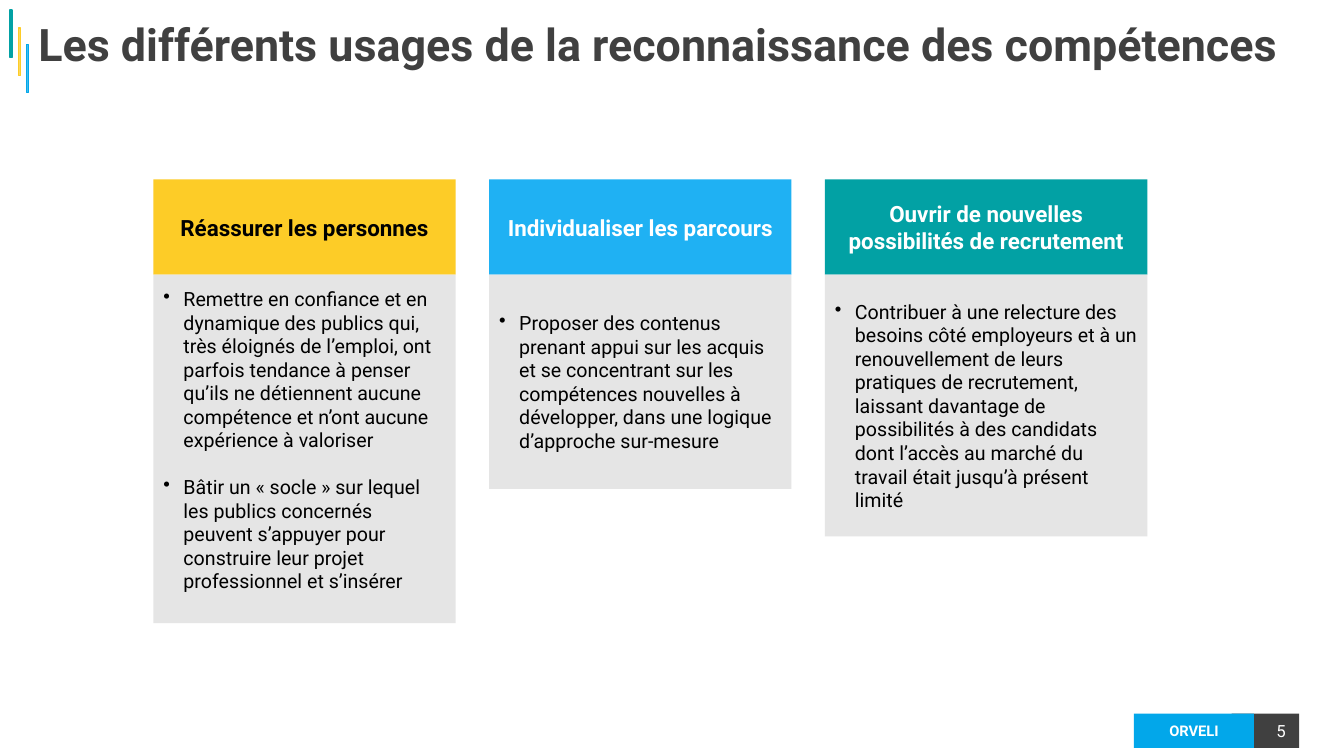
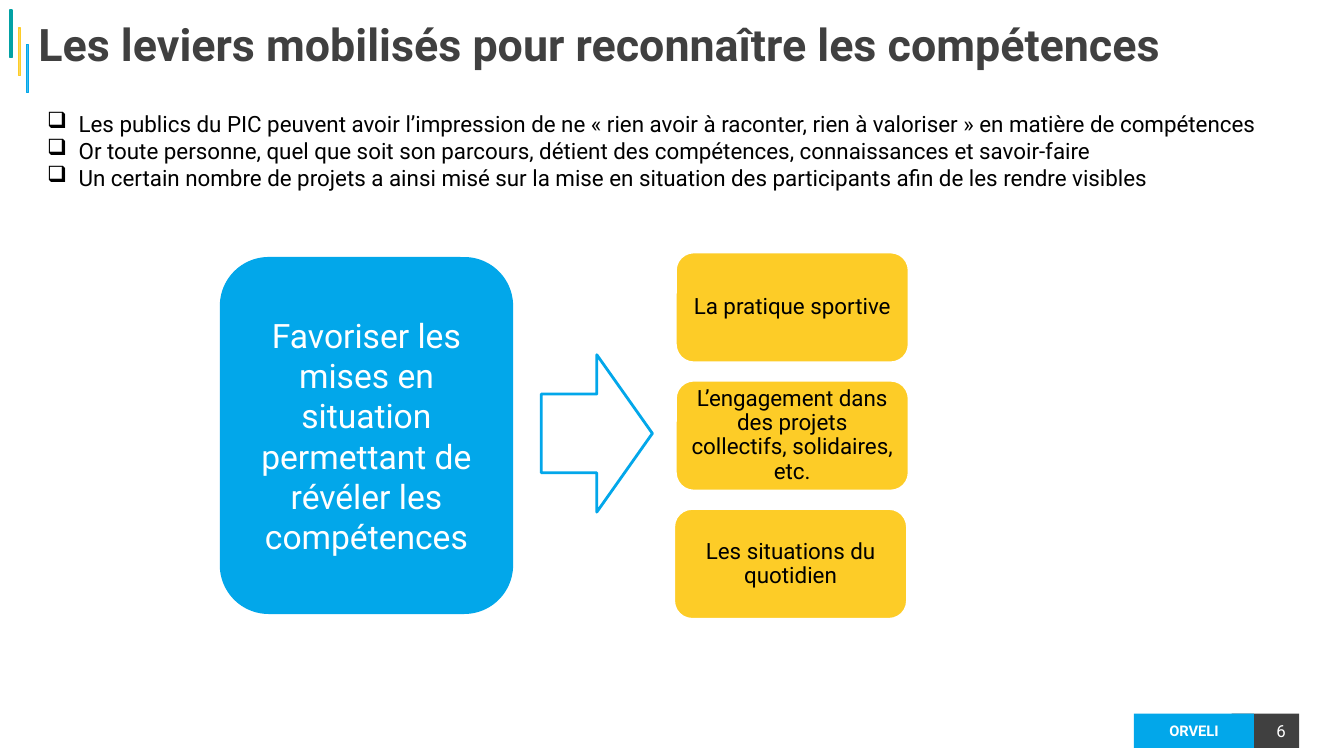
from pptx import Presentation
from pptx.dml.color import RGBColor
from pptx.enum import shapes as shp, text as txt
from pptx.oxml.ns import qn
from pptx.util import Pt
from lxml import etree

COLORS = {
    "teal": "02A1A4", "yellow": "FDCC27", "blue": "02A7EA", "sky": "1FB1F3",
    "dark": "404040", "panel": "E5E5E5", "white": "FFFFFF", "black": "000000",
}
FONT = "Roboto"
RECT = shp.MSO_SHAPE.RECTANGLE
ROUNDED = shp.MSO_SHAPE.ROUNDED_RECTANGLE
LEFT, CENTER = txt.PP_ALIGN.LEFT, txt.PP_ALIGN.CENTER
RIGHT, JUSTIFY = txt.PP_ALIGN.RIGHT, txt.PP_ALIGN.JUSTIFY
TOP, MIDDLE = txt.MSO_ANCHOR.TOP, txt.MSO_ANCHOR.MIDDLE


def add_box(slide, kind, box, fill, line=None, line_width=1):
    shape = slide.shapes.add_shape(kind, *map(Pt, box))
    shape.shadow.inherit = False
    shape.fill.solid()
    shape.fill.fore_color.rgb = RGBColor.from_string(COLORS[fill])
    if line:
        shape.line.color.rgb = RGBColor.from_string(COLORS[line])
        shape.line.width = Pt(line_width)
    else:
        shape.line.fill.background()
    return shape


def put_text(shape, *paragraphs, size=14, color="black", bold=False, align=LEFT,
             anchor=MIDDLE, insets=(7.2, 3.6, 7.2, 3.6), before=0, gap=0,
             line_spacing=None, bullet=None, indent=0):
    frame = shape.text_frame
    frame.word_wrap = True
    frame.vertical_anchor = anchor
    (frame.margin_left, frame.margin_top,
     frame.margin_right, frame.margin_bottom) = map(Pt, insets)
    for i, words in enumerate(paragraphs):
        par = frame.add_paragraph() if i else frame.paragraphs[0]
        par.alignment = align
        par.space_before = Pt(gap if i else before)
        if line_spacing:
            par.line_spacing = line_spacing
        run = par.add_run()
        run.text = words
        run.font.name, run.font.size, run.font.bold = FONT, Pt(size), bold
        run.font.color.rgb = RGBColor.from_string(COLORS[color])
        if bullet:
            props = par._p.get_or_add_pPr()
            props.set("marL", str(Pt(indent)))
            props.set("indent", str(-Pt(indent)))
            etree.SubElement(props, qn("a:buChar"), char=bullet)


deck = Presentation()
deck.slide_width, deck.slide_height = Pt(960), Pt(540)
WIDE_INSETS = (9.4, 5, 9.4, 5)

# Shared frame: footer, accent bars and title
titles = [
    "Les différents usages de la reconnaissance des compétences",
    "Les leviers mobilisés pour reconnaître les compétences",
]
for number, title in enumerate(titles, start=5):
    slide = deck.slides.add_slide(deck.slide_layouts[6])
    page = add_box(slide, RECT, (879.8, 509.8, 48.2, 24.5), "dark")
    put_text(page, str(number), size=12, color="white", align=RIGHT,
             anchor=TOP, insets=WIDE_INSETS)
    footer = add_box(slide, RECT, (810, 509.8, 85.7, 24.5), "blue")
    put_text(footer, "ORVELI", size=10.5, color="white", bold=True,
             align=CENTER, insets=WIDE_INSETS)
    for left, top, color in [(7.2, 7.2, "teal"), (13.2, 20, "yellow"), (19, 32, "blue")]:
        bar = add_box(slide, RECT, (left, top, 1.4, 34), color, line=color)
        tint = bar._element.spPr.find(qn("a:solidFill"))[0]
        etree.SubElement(tint, qn("a:alpha"), val="75000")
    heading = slide.shapes.add_textbox(Pt(18), Pt(9.4), Pt(932), Pt(43.2))
    put_text(heading, title, size=32, color="dark", bold=True,
             insets=WIDE_INSETS, before=6)

usages_slide, levers_slide = deck.slides

# Three usages: coloured header over a grey panel
# header, header fill, header text, width, panel height, bottom inset, points
usages = [
    ("Réassurer les personnes", "yellow", "black", 216, 249, 16.5, [
        "Remettre en confiance et en dynamique des publics qui, très éloignés de "
        "l’emploi, ont parfois tendance à penser qu’ils ne détiennent aucune "
        "compétence et n’ont aucune expérience à valoriser",
        "Bâtir un « socle » sur lequel les publics concernés peuvent s’appuyer "
        "pour construire leur projet professionnel et s’insérer"]),
    ("Individualiser les parcours", "sky", "white", 216, 153, 3.6, [
        "Proposer des contenus prenant appui sur les acquis et se concentrant sur "
        "les compétences nouvelles à développer, dans une logique d’approche "
        "sur-mesure"]),
    ("Ouvrir de nouvelles possibilités de recrutement", "teal", "white", 230.4, 187, 3.6, [
        "Contribuer à une relecture des besoins côté employeurs et à un "
        "renouvellement de leurs pratiques de recrutement, laissant davantage de "
        "possibilités à des candidats dont l’accès au marché du travail était "
        "jusqu’à présent limité"]),
]
HEADER_TOP, HEADER_HEIGHT, COLUMN_GAP = 128.2, 68, 23.8
left = 109.6
for header, fill, color, width, height, bottom, points in usages:
    band = add_box(usages_slide, RECT, (left, HEADER_TOP, width, HEADER_HEIGHT), fill)
    put_text(band, header, size=16, color=color, bold=True, align=CENTER)
    panel = add_box(usages_slide, RECT,
                    (left, HEADER_TOP + HEADER_HEIGHT, width, height), "panel")
    put_text(panel, *points, insets=(7.2, 3.6, 7.2, bottom), gap=16.5,
             bullet="•", indent=14.4)
    left += width + COLUMN_GAP

# Main lever and arrow
lever = add_box(levers_slide, ROUNDED, (157, 183.6, 209.5, 255), "blue")
put_text(lever, "Favoriser les mises en situation permettant de révéler les compétences",
         size=24, color="white", align=CENTER)
add_box(levers_slide, shp.MSO_SHAPE.RIGHT_ARROW, (386.6, 253.4, 79.4, 112.4),
        "white", line="blue", line_width=2)

# Situations that reveal skills
situations = [
    (482.4, "La pratique sportive"),
    (482.4, "L’engagement dans des projets collectifs, solidaires, etc."),
    (481.2, "Les situations du quotidien"),
]
for row, (left, words) in enumerate(situations):
    situation = add_box(levers_slide, ROUNDED, (left, 180 + row * 91.6, 167, 79.2),
                        "yellow", line="white", line_width=2)
    put_text(situation, words, size=16, align=CENTER, line_spacing=0.9,
             insets=(5, 1, 5, 1))

# Context points
context = levers_slide.shapes.add_textbox(Pt(26.6), Pt(69.1), Pt(879), Pt(71.3))
put_text(
    context,
    "Les publics du PIC peuvent avoir l’impression de ne « rien avoir à raconter, "
    "rien à valoriser » en matière de compétences",
    "Or toute personne, quel que soit son parcours, détient des compétences, "
    "connaissances et savoir-faire",
    "Un certain nombre de projets a ainsi misé sur la mise en situation des "
    "participants afin de les rendre visibles",
    size=16, align=JUSTIFY, anchor=TOP, insets=(7.2, 9.5, 7.2, 3.6),
    bullet="❑", indent=22.5)

deck.save("out.pptx")
